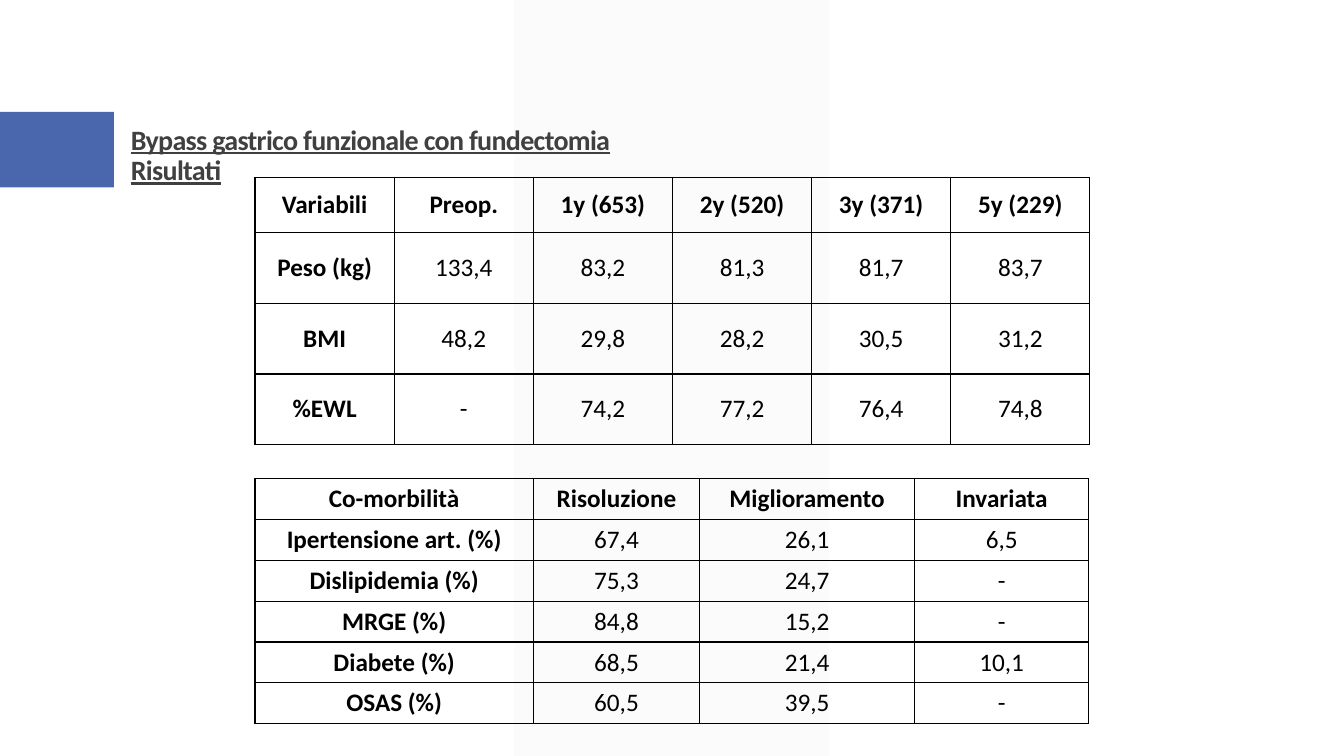
from dataclasses import dataclass

from lxml import etree
from pptx import Presentation
from pptx import util as u
from pptx.dml.color import RGBColor
from pptx.enum import shapes, text
from pptx.oxml import ns


@dataclass(frozen=True)
class Theme:
    font: str = "Calibri"
    title_size: int = 20
    cell_size: int = 18
    title: str = "404040"
    ink: str = "000000"
    accent: str = "4A66AC"
    band: str = "F2F2F2"
    band_opacity: int = 30
    border: float = 1


THEME = Theme()

TABLE_LEFT = 2.53
OUTCOME_COLUMNS = [1.38] * 6
OUTCOME_ROWS = [0.55] + [0.7] * 3
OUTCOMES = [
    ["Variabili", "Preop.", "1y (653)", "2y (520)", "3y (371)", "5y (229)"],
    ["Peso (kg)", "133,4", "83,2", "81,3", "81,7", "83,7"],
    ["BMI", "48,2", "29,8", "28,2", "30,5", "31,2"],
    ["%EWL", "-", "74,2", "77,2", "76,4", "74,8"],
]

COMORBIDITY_COLUMNS = [2.76, 1.65, 2.13, 1.73]
COMORBIDITY_ROWS = [0.405] * 6
COMORBIDITIES = [
    ["Co-morbilità", "Risoluzione", "Miglioramento", "Invariata"],
    ["Ipertensione art. (%)", "67,4", "26,1", "6,5"],
    ["Dislipidemia (%)", "75,3", "24,7", "-"],
    ["MRGE (%)", "84,8", "15,2", "-"],
    ["Diabete (%)", "68,5", "21,4", "10,1"],
    ["OSAS (%)", "60,5", "39,5", "-"],
]


def add_span(para, words, size, color, bold):
    span = para.add_run()
    span.text = words
    span.font.name = THEME.font
    span.font.size = u.Pt(size)
    span.font.bold = bold
    span.font.color.rgb = RGBColor.from_string(color)
    return span


def add_block(page, kind, left, top, width, height, color):
    block = page.shapes.add_shape(
        kind, u.Inches(left), u.Inches(top), u.Inches(width), u.Inches(height))
    block.shadow.inherit = False
    block.fill.solid()
    block.fill.fore_color.rgb = RGBColor.from_string(color)
    block.line.fill.background()
    return block


def add_band(page):
    """Pale translucent strip down the full height of the page."""
    band = add_block(page, shapes.MSO_SHAPE.PARALLELOGRAM, 5.1, 0, 3.12, 7.5, THEME.band)
    band.adjustments[0] = 0
    color = band.fill._xPr.find(".//" + ns.qn("a:srgbClr"))
    etree.SubElement(color, ns.qn("a:alpha"), val=str(THEME.band_opacity * 1000))


def add_title(page, lines):
    box = page.shapes.add_textbox(u.Inches(1.2), u.Inches(0.31), u.Inches(11), u.Inches(1.59))
    frame = box.text_frame
    frame.word_wrap = True
    frame.vertical_anchor = text.MSO_ANCHOR.BOTTOM
    para = frame.paragraphs[0]
    para.line_spacing = 0.9
    for index, line in enumerate(lines):
        if index:
            para.add_line_break()
        span = add_span(para, line, THEME.title_size, THEME.title, True)
        span.font.underline = True
        span.font._element.set("spc", "-50")


def draw_borders(cell):
    properties = cell._tc.get_or_add_tcPr()
    for side in ("lnL", "lnR", "lnT", "lnB"):
        line = etree.SubElement(properties, ns.qn("a:" + side), w=str(u.Pt(THEME.border)))
        fill = etree.SubElement(line, ns.qn("a:solidFill"))
        etree.SubElement(fill, ns.qn("a:srgbClr"), val=THEME.ink)


def add_grid(page, top, columns, rows, values):
    """Bordered table with a bold first row and first column."""
    frame = page.shapes.add_table(
        len(rows), len(columns), u.Inches(TABLE_LEFT), u.Inches(top),
        u.Inches(sum(columns)), u.Inches(sum(rows)))
    table = frame.table
    table.horz_banding = False
    for column, width in zip(table.columns, columns):
        column.width = u.Inches(width)
    for row, height in zip(table.rows, rows):
        row.height = u.Inches(height)
    for r, record in enumerate(values):
        for c, value in enumerate(record):
            cell = table.cell(r, c)
            draw_borders(cell)
            cell.fill.background()
            cell.vertical_anchor = text.MSO_ANCHOR.MIDDLE
            para = cell.text_frame.paragraphs[0]
            para.alignment = text.PP_ALIGN.CENTER
            add_span(para, value, THEME.cell_size, THEME.ink, r == 0 or c == 0)


def main():
    deck = Presentation()
    deck.slide_width, deck.slide_height = u.Inches(13.33), u.Inches(7.5)
    page = deck.slides.add_slide(deck.slide_layouts[6])
    add_band(page)
    add_block(page, shapes.MSO_SHAPE.RECTANGLE, 0, 1.11, 1.13, 0.75, THEME.accent)
    add_title(page, ["Bypass gastrico funzionale con fundectomia", "Risultati"])
    add_grid(page, 1.76, OUTCOME_COLUMNS, OUTCOME_ROWS, OUTCOMES)
    add_grid(page, 4.75, COMORBIDITY_COLUMNS, COMORBIDITY_ROWS, COMORBIDITIES)
    deck.save("out.pptx")


if __name__ == "__main__":
    main()
